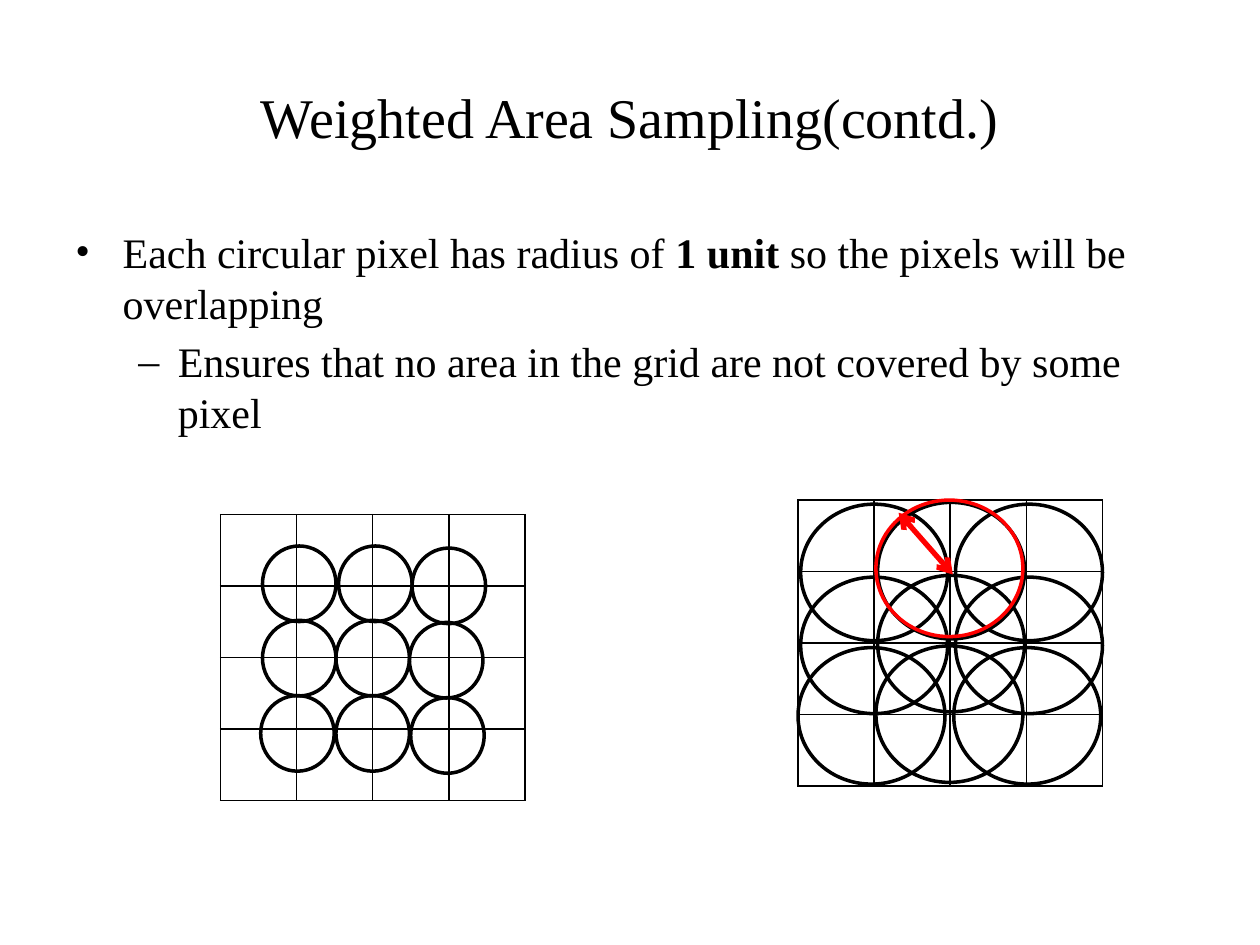
from pptx import Presentation
from pptx.dml.color import RGBColor
from pptx.enum.shapes import MSO_CONNECTOR, MSO_SHAPE
from pptx.enum.text import MSO_ANCHOR, PP_ALIGN
from pptx.oxml.ns import qn
from pptx.util import Pt
from lxml import etree

OVAL = MSO_SHAPE.OVAL
STRAIGHT = MSO_CONNECTOR.STRAIGHT
MIDDLE = MSO_ANCHOR.MIDDLE
CENTER = PP_ALIGN.CENTER
FONT = "Times New Roman"
BLACK, RED = "000000", "FF0000"
GRID_W, GRID_H, CELLS = 174, 163.4, 4


def rgb(value):
    return RGBColor.from_string(value)


def place(shape, x, y, w, h):
    shape.left, shape.top, shape.width, shape.height = Pt(x), Pt(y), Pt(w), Pt(h)


def add_text(p, text, size=24, bold=False, color=BLACK):
    r = p.add_run()
    r.text = text
    r.font.name, r.font.size, r.font.bold = FONT, Pt(size), bold
    r.font.color.rgb = rgb(color)


def set_bullet(p, char, margin, hang):
    pPr = p._p.get_or_add_pPr()
    pPr.set("marL", str(Pt(margin)))
    pPr.set("indent", str(-Pt(hang)))
    etree.SubElement(pPr, qn("a:buFont")).set("typeface", FONT)
    etree.SubElement(pPr, qn("a:buChar")).set("char", char)


def add_title(s, x, y, w, h):
    title = s.shapes.title
    place(title, x, y, w, h)
    tf = title.text_frame
    tf.vertical_anchor = MIDDLE
    p = tf.paragraphs[0]
    p.alignment = CENTER
    add_text(p, "Weighted Area Sampling(contd.)", size=32)


def add_body(s, x, y, w, h):
    tf = s.shapes.add_textbox(Pt(x), Pt(y), Pt(w), Pt(h)).text_frame
    tf.word_wrap = True
    p = tf.paragraphs[0]
    p.space_before = Pt(4.8)
    set_bullet(p, "•", 27, 27)
    add_text(p, "Each circular pixel has radius of ")
    add_text(p, "1 unit ", bold=True)
    add_text(p, "so the pixels will be overlapping")
    p = tf.add_paragraph()
    p.level = 1
    p.space_before = Pt(4.8)
    set_bullet(p, "–", 58.5, 22.5)
    add_text(p, "Ensures that no area in the grid are not covered by some pixel")


def set_borders(cell, color, width):
    tcPr = cell._tc.get_or_add_tcPr()
    for i, side in enumerate(("lnL", "lnR", "lnT", "lnB")):
        ln = etree.Element(qn("a:" + side), w=str(Pt(width)))
        fill = etree.SubElement(ln, qn("a:solidFill"))
        etree.SubElement(fill, qn("a:srgbClr")).set("val", color)
        tcPr.insert(i, ln)


def add_grid(s, x, y):
    table = s.shapes.add_table(CELLS, CELLS, Pt(x), Pt(y), Pt(GRID_W), Pt(GRID_H)).table
    table.first_row = table.horz_banding = False
    for col in table.columns:
        col.width = Pt(GRID_W / CELLS)
    for row in table.rows:
        row.height = Pt(GRID_H / CELLS)
        for cell in row.cells:
            cell.fill.background()
            set_borders(cell, BLACK, 1)


def add_circle(s, x, y, w, h, color=BLACK):
    circle = s.shapes.add_shape(OVAL, Pt(x), Pt(y), Pt(w), Pt(h))
    circle.shadow.inherit = False
    circle.fill.background()
    circle.line.color.rgb = rgb(color)
    circle.line.width = Pt(2)


def add_pixel_grid(s, x, y, size, row_lefts, row_tops, col_drops):
    add_grid(s, x, y)
    for lefts, top in zip(row_lefts, row_tops):
        for left, drop in zip(lefts, col_drops):
            add_circle(s, x + left, y + top + drop, *size)


def add_radius(s, x1, y1, x2, y2):
    arrow = s.shapes.add_connector(STRAIGHT, Pt(x1), Pt(y1), Pt(x2), Pt(y2))
    arrow.line.color.rgb = rgb(RED)
    arrow.line.width = Pt(3)
    ln = arrow.line._get_or_add_ln()
    for end in ("headEnd", "tailEnd"):
        etree.SubElement(ln, qn("a:" + end)).set("type", "arrow")
    etree.SubElement(arrow._element.spPr, qn("a:effectLst"))


def add_separate_pixels(s, x, y):
    lefts = [(24, 67.5, 109.5), (24, 66, 108), (23, 66, 108.7)]
    add_pixel_grid(s, x, y, (42, 43.2), lefts, (18, 60.5, 103.5), (0, 0, 1.2))


def add_overlapping_pixels(s, x, y):
    size = (84, 78)
    lefts = [(1.5, 45.5, 90), (1.5, 45.5, 90), (0, 44.5, 89)]
    add_pixel_grid(s, x, y, size, lefts, (2.3, 44, 84.3), (0, -1, 0))
    add_circle(s, x + 44.5, y, *size, color=RED)
    add_radius(s, x + 88.5, y + 42.5, x + 57.5, y + 7.2)


def main():
    prs = Presentation()
    prs.slide_width, prs.slide_height = Pt(720), Pt(540)
    s = prs.slides.add_slide(prs.slide_layouts[5])
    add_title(s, 36, 21.6, 648, 90)
    add_body(s, 36, 126, 636, 396)
    add_separate_pixels(s, 126, 294)
    add_overlapping_pixels(s, 456, 285.8)
    prs.save("out.pptx")


if __name__ == "__main__":
    main()
